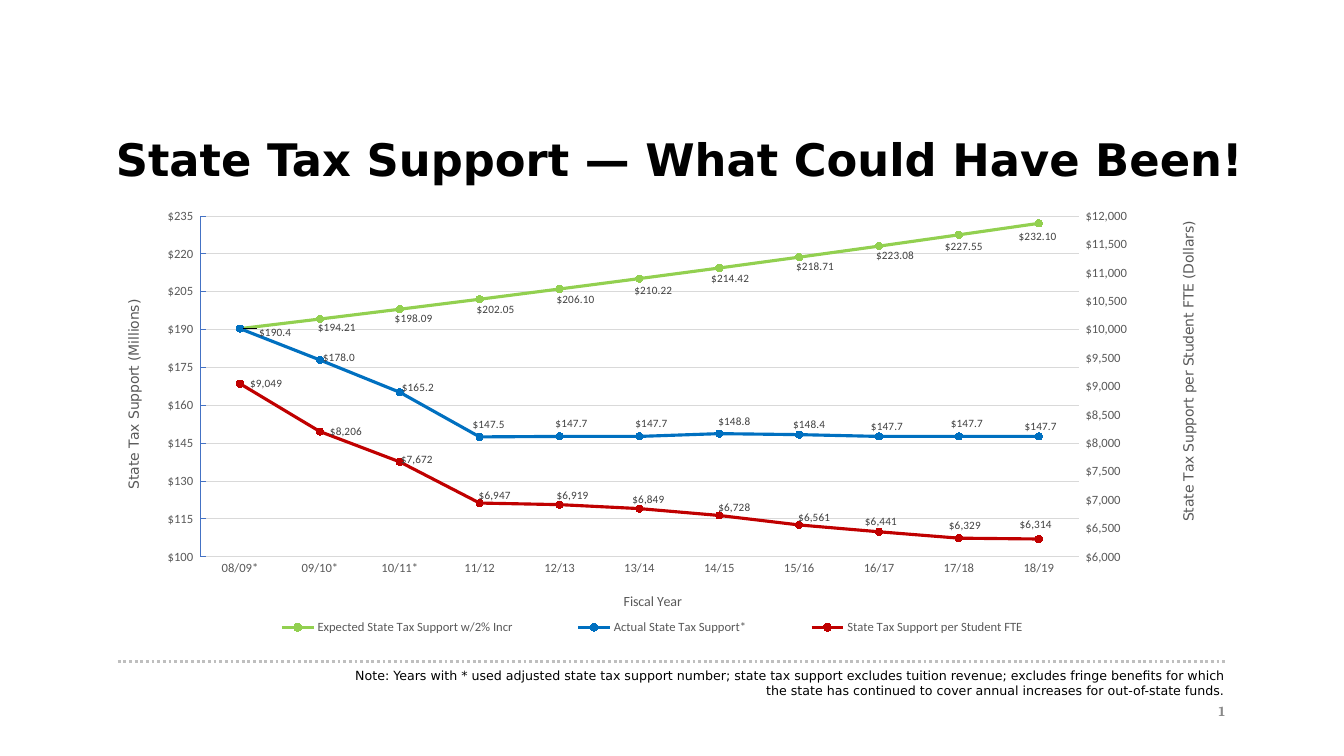
import copy

import pptx
import pptx.chart.axis
import pptx.chart.data
import pptx.dml.color
import pptx.enum.chart
import pptx.enum.dml
import pptx.enum.shapes
import pptx.enum.text
import pptx.oxml
import pptx.oxml.ns
import pptx.util

Cm, Pt = pptx.util.Cm, pptx.util.Pt
qn = pptx.oxml.ns.qn
xl = pptx.enum.chart
NS = 'xmlns:c="http://schemas.openxmlformats.org/drawingml/2006/chart"'
COLORS = {"black": "000000", "number": "898989", "axis": "595959", "label": "404040",
          "rule": "BFBFBF", "grid": "D9D9D9", "axis line": "4472C4",
          "expected": "92D050", "actual": "0070C0", "per student": "C00000"}
YEARS = ["08/09*", "09/10*", "10/11*", "11/12", "12/13", "13/14",
         "14/15", "15/16", "16/17", "17/18", "18/19"]
CHART_SIZE = (10.98, 4.54)  # inches, for turning label shifts into fractions

# Label shifts are (right, down) from the point, in hundredths of an inch;
# "reach" is the shift a label has by default
SERIES = [
    {"name": "Expected State Tax Support w/2% Incr", "color": "expected", "digits": ".00",
     "values": [190.4, 194.21, 198.09, 202.05, 206.1, 210.22, 214.42, 218.71, 223.08,
                227.55, 232.1],
     "reach": 29, "hidden": [0],
     "shifts": {1: (17, 9), 2: (14, 10), 3: (16, 11), 4: (16, 11), 5: (14, 12),
                6: (11, 11), 7: (16, 10), 8: (16, 10), 9: (5, 12), 10: (-1, 13)}},
    {"name": "Actual State Tax Support*", "color": "actual", "digits": ".0",
     "values": [190.4, 178, 165.2, 147.5, 147.7, 147.7, 148.8, 148.4, 147.7, 147.7, 147.7],
     "reach": 26, "hidden": [],
     "shifts": {0: (35, 4), 1: (19, -2), 2: (18, -4), 3: (9, -12), 4: (12, -13),
                5: (12, -13), 6: (15, -12), 7: (10, -10), 8: (8, -10), 9: (8, -13),
                10: (2, -10)}},
    {"name": "State Tax Support per Student FTE", "color": "per student", "digits": "",
     "values": [9049, 8206, 7672, 6947, 6919, 6849, 6728, 6561, 6441, 6329, 6314],
     "reach": 26, "hidden": [],
     "shifts": {2: (17, -2), 3: (15, -7), 4: (13, -9), 5: (9, -9), 6: (15, -8),
                7: (15, -7), 8: (2, -10), 9: (6, -12), 10: (-3, -14)}},
]


def rgb(name):
    return pptx.dml.color.RGBColor.from_string(COLORS[name])


def apply(target, values):
    for key, value in values.items():
        setattr(target, key, value)


def dollars(digits=""):
    n = "#,##0" + digits
    return f'_("$"* {n}_);_("$"* \\({n}\\);_("$"* "-"_);_(@_)'


def layout(x, y, w=None, h=None, inner=False, edge=True):
    target = '<c:layoutTarget val="inner"/>' if inner else ""
    modes = '<c:xMode val="edge"/><c:yMode val="edge"/>' if edge else ""
    size = f'<c:w val="{w}"/><c:h val="{h}"/>' if w else ""
    return pptx.oxml.parse_xml(
        f'<c:layout {NS}><c:manualLayout>{target}{modes}<c:x val="{x}"/><c:y val="{y}"/>'
        f'{size}</c:manualLayout></c:layout>')


def place(element, new_layout, after=None):
    """Replace the layout of a chart part; it follows `after`, or comes first."""
    for old in element.findall(qn("c:layout")):
        element.remove(old)
    previous = element.find(qn(after)) if after else None
    if previous is None:
        element.insert(0, new_layout)
    else:
        previous.addnext(new_layout)


class Slide:
    def __init__(self, prs):
        self.s = prs.slides.add_slide(prs.slide_layouts[6])
        self.font = "DejaVu Sans"
        self.chart_font = "Calibri"

    def style(self, font, size, color, name=None, bold=False):
        apply(font, {"size": Pt(size), "name": name or self.font, "bold": bold})
        font.color.rgb = rgb(color)

    def line(self, fmt, color, width):
        fmt.color.rgb = rgb(color)
        fmt.width = Pt(width)

    def text(self, text, box, size, color="black", align="LEFT", spacing=None, **font):
        sp = self.s.shapes.add_textbox(*map(Cm, box))
        tf = sp.text_frame
        tf.word_wrap = True
        p = tf.paragraphs[0]
        apply(p, {"alignment": getattr(pptx.enum.text.PP_ALIGN, align),
                  "line_spacing": spacing})
        r = p.add_run()
        r.text = text
        self.style(r.font, size, color, **font)

    def rule(self, x1, x2, y):
        sp = self.s.shapes.add_connector(
            pptx.enum.shapes.MSO_CONNECTOR.STRAIGHT, Cm(x1), Cm(y), Cm(x2), Cm(y))
        self.line(sp.line, "rule", 2)
        sp.line.dash_style = pptx.enum.dml.MSO_LINE.ROUND_DOT
        sp._element.spPr.append(pptx.oxml.parse_xml(
            '<a:effectLst xmlns:a="http://schemas.openxmlformats.org/drawingml/2006/main"/>'))

    def axis_title(self, axis, text, x, y, font=None):
        tf = axis.axis_title.text_frame
        tf.text = text
        self.style(tf.paragraphs[0].runs[0].font, 10, "axis", font)
        place(axis.axis_title._element, layout(x, y), "c:tx")

    def value_axis(self, axis, low, high, step, tick):
        apply(axis, {"minimum_scale": low, "maximum_scale": high, "major_unit": step,
                     "major_tick_mark": tick})
        apply(axis.tick_labels, {"number_format": dollars(), "number_format_is_linked": False})
        self.style(axis.tick_labels.font, 9, "axis", self.chart_font)

    def series(self, ser, info):
        ser.smooth = False
        self.line(ser.format.line, info["color"], 2.25)
        apply(ser.marker, {"style": xl.XL_MARKER_STYLE.CIRCLE, "size": 5})
        ser.marker.format.fill.solid()
        ser.marker.format.fill.fore_color.rgb = rgb(info["color"])
        self.line(ser.marker.format.line, info["color"], 0.75)
        labels = ser.data_labels
        apply(labels, {"show_value": True, "number_format": dollars(info["digits"]),
                       "number_format_is_linked": False,
                       "position": xl.XL_LABEL_POSITION.RIGHT})
        self.style(labels.font, 8, "label", self.chart_font)

        # Single labels, hidden or shifted
        shared = [e for e in labels._element if e.tag != qn("c:showLeaderLines")]
        points = sorted(info["hidden"] + list(info["shifts"]))
        for place_no, i in enumerate(points):
            label = pptx.oxml.parse_xml(f'<c:dLbl {NS}><c:idx val="{i}"/></c:dLbl>')
            if i in info["hidden"]:
                label.append(pptx.oxml.parse_xml(f'<c:delete {NS} val="1"/>'))
            else:
                dx, dy = info["shifts"][i]
                label.append(layout(round((dx - info["reach"]) / 100 / CHART_SIZE[0], 4),
                                    round(dy / 100 / CHART_SIZE[1], 4), edge=False))
                label.extend(copy.deepcopy(shared))
            labels._element.insert(place_no, label)

    def second_axis(self, chart):
        """Move the last series to a line plot with its own axis on the right."""
        first = chart.plots[0]._element
        second = copy.deepcopy(first)
        first.remove(first.findall(qn("c:ser"))[-1])
        for ser in second.findall(qn("c:ser"))[:-1]:
            second.remove(ser)
        first.addnext(second)
        cat, val = (copy.deepcopy(a._element) for a in (chart.category_axis, chart.value_axis))
        ids = ("50010", "50020")
        for ref, new in zip(second.findall(qn("c:axId")), ids):
            ref.set("val", new)
        for ax, own, other in ((cat, *ids), (val, *reversed(ids))):
            ax.find(qn("c:axId")).set("val", own)
            ax.find(qn("c:crossAx")).set("val", other)
        chart.value_axis._element.addnext(val)
        val.addnext(cat)
        pptx.chart.axis.CategoryAxis(cat).visible = False
        val.find(qn("c:axPos")).set("val", "r")
        val.find(qn("c:crosses")).set("val", "max")
        return pptx.chart.axis.ValueAxis(val)

    def chart(self, box):
        data = pptx.chart.data.CategoryChartData()
        data.categories = YEARS
        for info in SERIES:
            data.add_series(info["name"], info["values"])
        chart = self.s.shapes.add_chart(
            xl.XL_CHART_TYPE.LINE_MARKERS, *map(Cm, box), data).chart
        apply(chart, {"has_title": False, "has_legend": True})
        self.style(chart.font, 10, "black", self.chart_font)
        chart.plots[0].vary_by_categories = False
        for ser, info in zip(chart.plots[0].series, SERIES):
            self.series(ser, info)

        # Axes
        left, bottom, tick = chart.value_axis, chart.category_axis, xl.XL_TICK_MARK
        left.has_major_gridlines = False
        right = self.second_axis(chart)
        self.value_axis(left, 100, 235, 15, tick.INSIDE)
        self.value_axis(right, 6000, 12000, 500, tick.NONE)
        left.has_major_gridlines = True
        self.line(left.major_gridlines.format.line, "grid", 0.75)
        self.line(left.format.line, "axis line", 0.75)
        right.format.line.fill.background()
        bottom.major_tick_mark = tick.NONE
        self.line(bottom.format.line, "grid", 0.75)
        self.style(bottom.tick_labels.font, 9, "axis", self.chart_font)
        self.axis_title(left, "State Tax Support (Millions)", 0.021, 0.213)
        self.axis_title(right, "State Tax Support per Student FTE (Dollars)", 0.974, 0.042)
        self.axis_title(bottom, "Fiscal Year", 0.472, 0.853, self.chart_font)

        # Legend and plot area
        apply(chart.legend, {"position": xl.XL_LEGEND_POSITION.BOTTOM,
                             "include_in_layout": False})
        self.style(chart.legend.font, 9, "axis", self.chart_font)
        place(chart.legend._element, layout(0.11, 0.905, 0.78, 0.06), "c:legendPos")
        plot_area = chart.plots[0]._element.getparent()
        place(plot_area, layout(0.0915, 0.036, 0.794, 0.745, inner=True))


def main():
    prs = pptx.Presentation()
    apply(prs, {"slide_width": Cm(33.87), "slide_height": Cm(19.05)})
    s = Slide(prs)
    s.rule(2.97, 30.91, 16.66)
    s.text("Note: Years with * used adjusted state tax support number; state tax support "
           "excludes tuition revenue; excludes fringe benefits for which the state has "
           "continued to cover annual increases for out-of-state funds.",
           (8.56, 16.71, 22.53, 1.02), 9, align="RIGHT")
    s.chart((2.49, 5.03, 27.89, 11.53))
    s.text("1", (23.5, 17.58, 7.62, 1.02), 10, "number", "RIGHT", name="Cambria", bold=True)
    s.text("State Tax Support — What Could Have Been!", (2.67, 3.35, 29.21, 2.95), 32,
           spacing=Pt(34), bold=True)
    prs.save("out.pptx")


if __name__ == "__main__":
    main()
